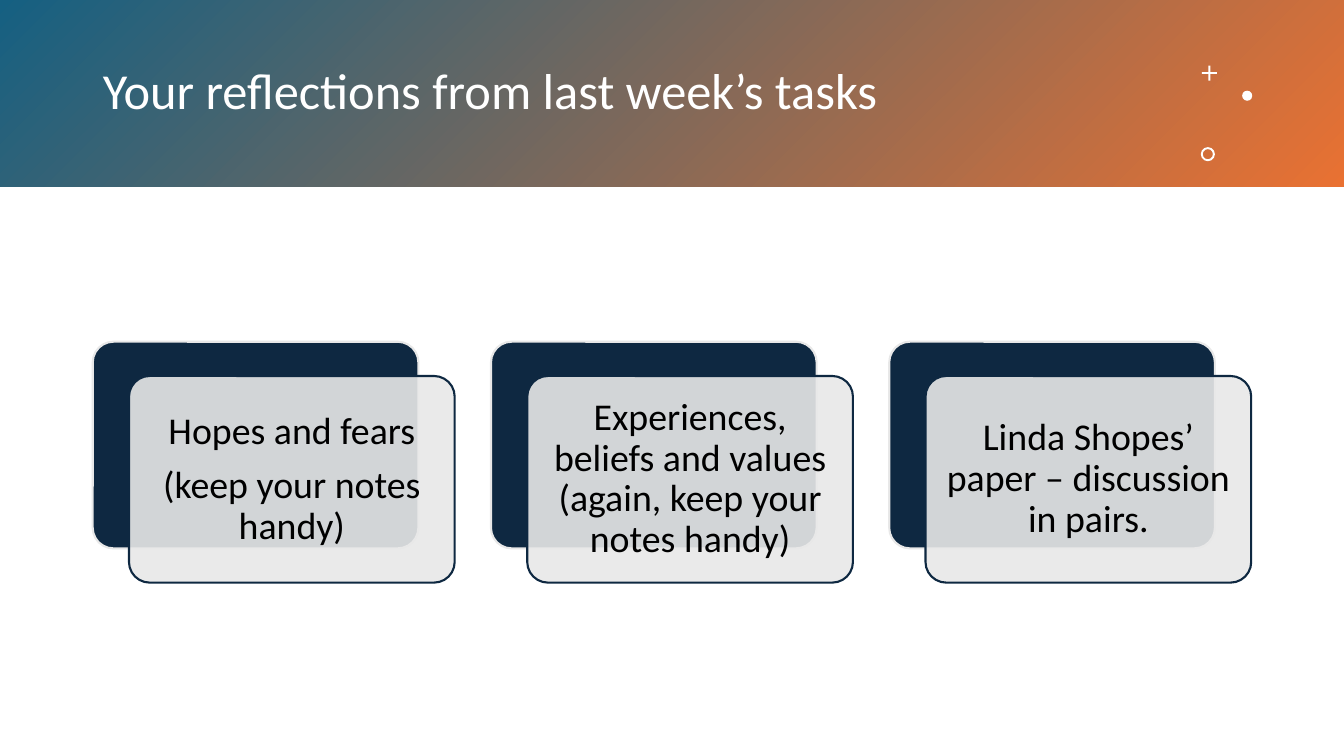
from lxml.etree import SubElement
from pptx import Presentation
from pptx.dml.color import RGBColor
from pptx.enum.shapes import MSO_SHAPE as Shape
from pptx.enum.text import MSO_ANCHOR as Anchor, MSO_AUTO_SIZE as AutoSize, PP_ALIGN as Align
from pptx.oxml.ns import qn
from pptx.util import Pt

EMU_PER_PX = 9144
FONT = "Calibri"
NAVY, GREY, WHITE, BLACK = "0E2841", "E8E8E8", "FFFFFF", "000000"
TEAL, ORANGE = "156082", "E97132"


def px(length):
    return length * EMU_PER_PX


def color(hex_string):
    return RGBColor.from_string(hex_string)


class ReflectionSlide:
    """Draws the styled elements of one title-only slide."""

    def __init__(self, presentation):
        self.slide = presentation.slides.add_slide(presentation.slide_layouts[5])

    def shape(self, kind, left, top, width, height, fill=None, line=None, adjustment=None):
        shape = self.slide.shapes.add_shape(kind, px(left), px(top), px(width), px(height))
        shape.shadow.inherit = False
        if adjustment is not None:
            shape.adjustments[0] = adjustment
        if fill:
            shape.fill.solid()
            shape.fill.fore_color.rgb = color(fill)
        if line:
            shape.line.color.rgb = color(line)
            shape.line.width = Pt(1.5)
        else:
            shape.line.fill.background()
        return shape

    def banner(self, width, height, start, end):
        banner = self.shape(Shape.RECTANGLE, 0, 0, width, height)
        banner.fill.gradient()
        banner.fill.gradient_angle = 315
        for stop, hex_string in zip(banner.fill.gradient_stops, (start, end)):
            stop.color.rgb = color(hex_string)

    def text(self, shape, paragraphs, size, hex_string, align, space_after=0):
        frame = shape.text_frame
        frame.text = "\n".join(paragraphs)
        frame.word_wrap = True
        frame.auto_size = AutoSize.NONE
        frame.vertical_anchor = Anchor.MIDDLE
        for paragraph in frame.paragraphs:
            paragraph.alignment = align
            paragraph.line_spacing = 0.9
            paragraph.space_after = Pt(space_after)
            for run in paragraph.runs:
                run.font.name = FONT
                run.font.size = Pt(size)
                run.font.color.rgb = color(hex_string)
        return frame

    def title(self, text, left, top, width, height):
        title = self.slide.shapes.title
        title.left, title.top, title.width, title.height = map(px, (left, top, width, height))
        self.text(title, [text], 36, WHITE, Align.LEFT)
        self.slide.shapes.element.append(title.element)

    def card(self, left, top, paragraphs):
        width, height = 323, 205
        self.shape(Shape.ROUNDED_RECTANGLE, left, top, width, height, NAVY, GREY, 0.1)
        front = self.shape(Shape.ROUNDED_RECTANGLE, left + 36, top + 34, width, height, GREY, NAVY, 0.1)
        fill_color = front.element.spPr.find(qn("a:solidFill"))[0]
        SubElement(fill_color, qn("a:alpha"), val="90000")
        frame = self.text(front, paragraphs, 27, BLACK, Align.CENTER, 9.45)
        frame.margin_left = frame.margin_right = px(11)
        frame.margin_top = frame.margin_bottom = px(11)


def main():
    presentation = Presentation()
    presentation.slide_width, presentation.slide_height = px(1333), px(750)
    page = ReflectionSlide(presentation)

    page.banner(1333, 185, TEAL, ORANGE)
    page.title("Your reflections from last week’s tasks", 92, 33, 1075, 119)
    page.shape(Shape.CROSS, 1192, 65, 15, 15, WHITE, adjustment=0.44)
    page.shape(Shape.OVAL, 1232, 90, 10, 10, WHITE)
    page.shape(Shape.DONUT, 1191, 146, 14, 14, WHITE, adjustment=0.14)

    topics = [
        ["Hopes and fears", "(keep your notes handy)"],
        ["Experiences, beliefs and values (again, keep your notes handy)"],
        ["Linda Shopes’ paper – discussion in pairs."],
    ]
    for index, paragraphs in enumerate(topics):
        page.card(92 + 395 * index, 339, paragraphs)

    presentation.save("out.pptx")


if __name__ == "__main__":
    main()
